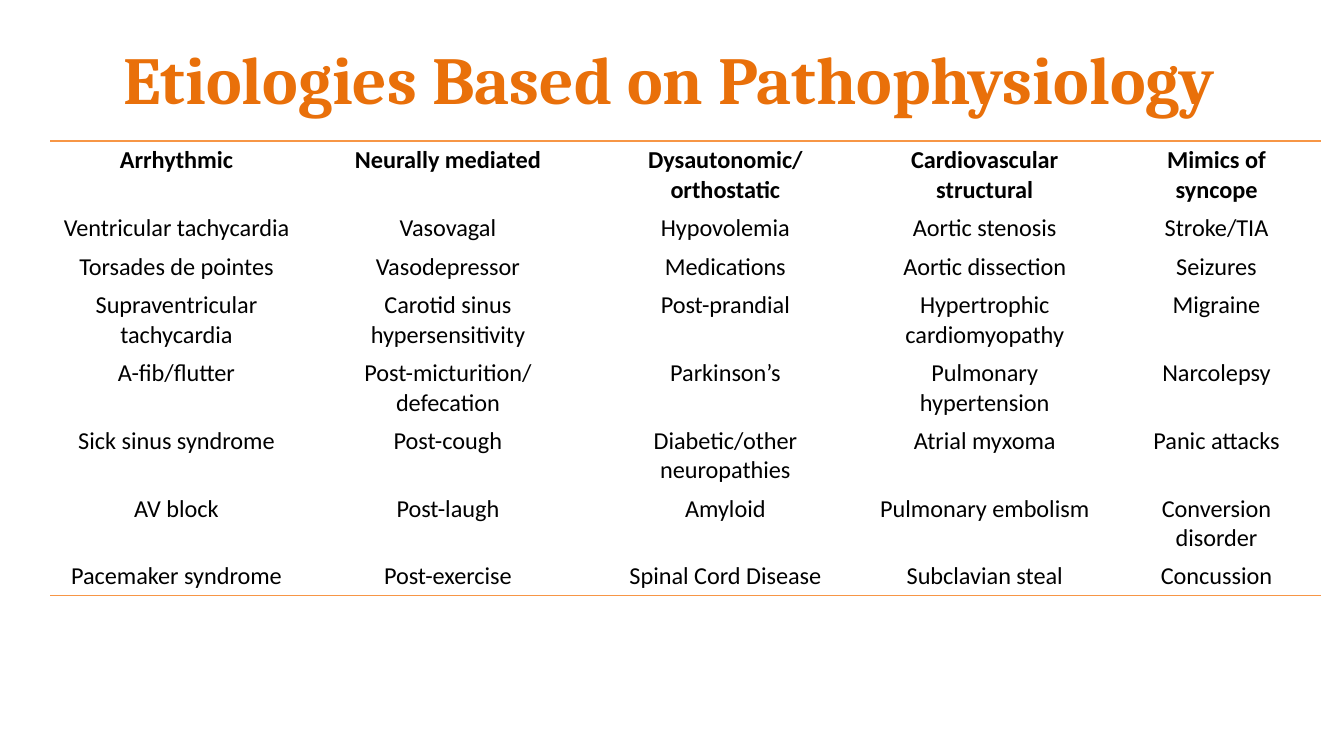
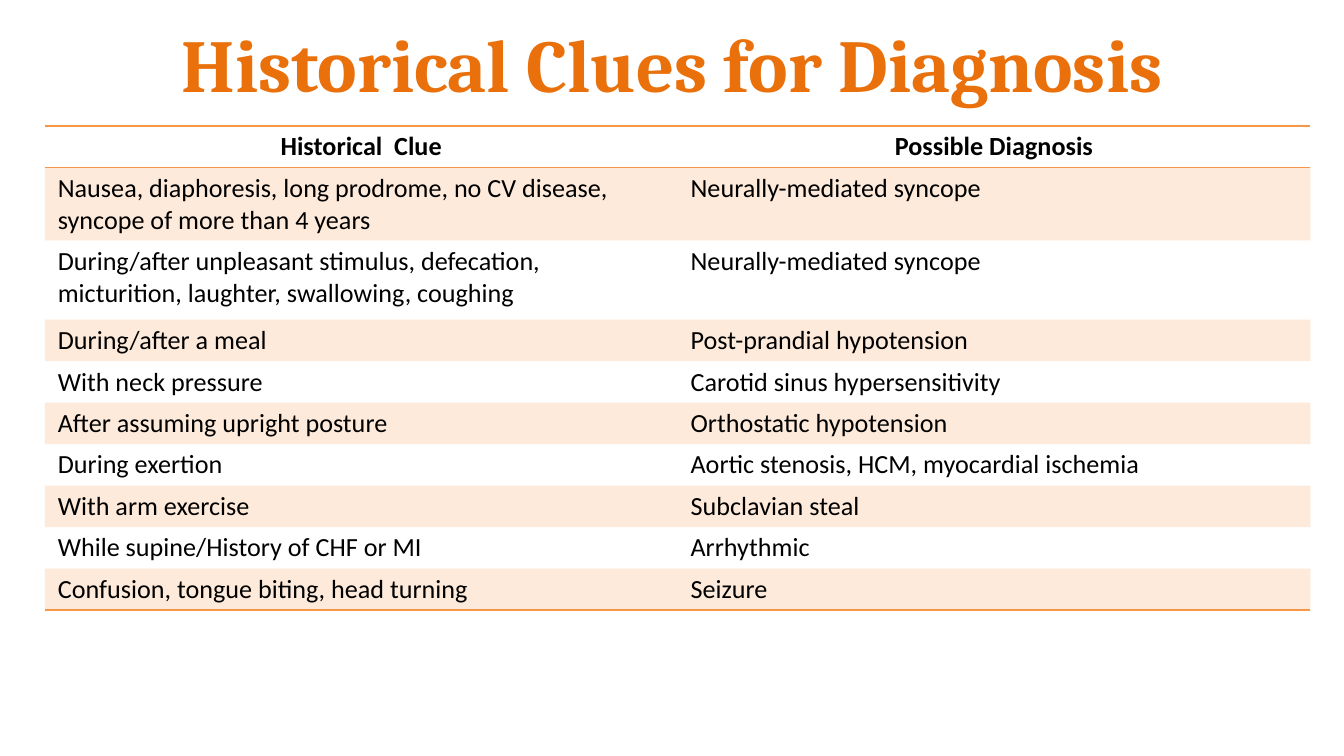
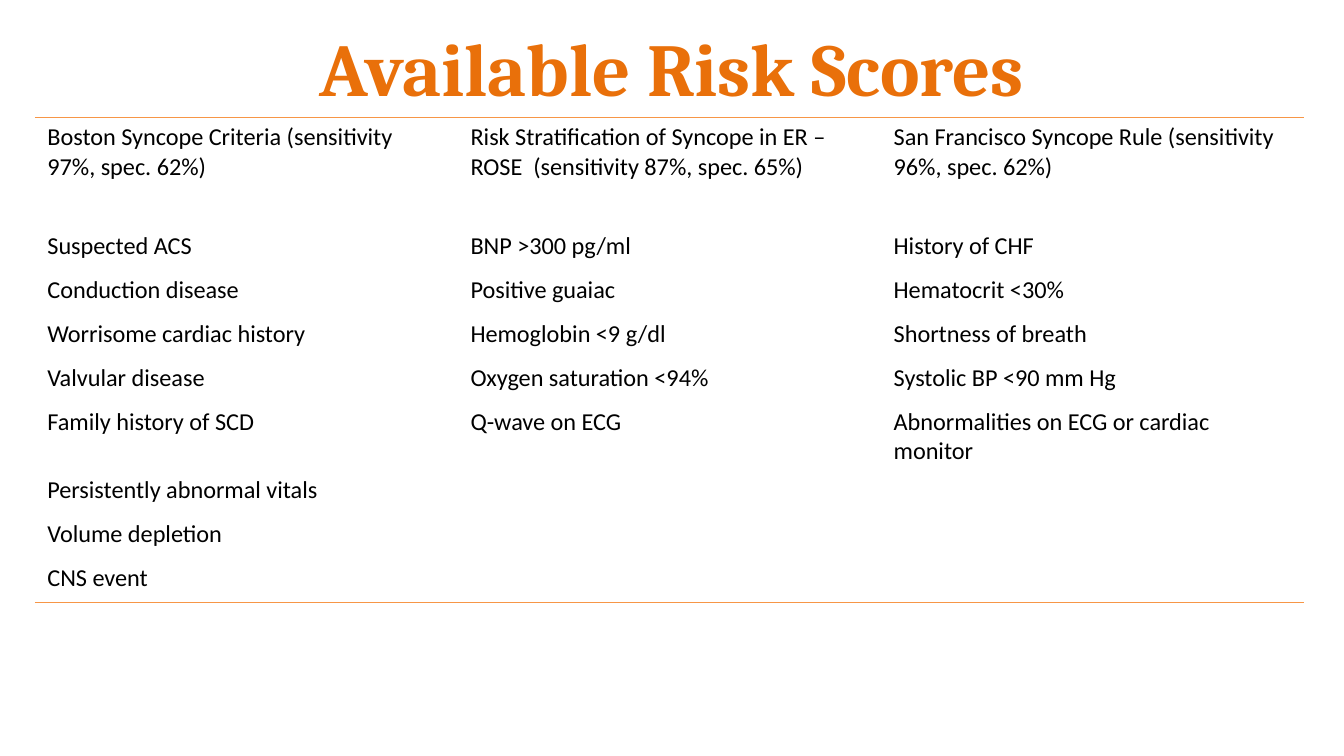
from lxml.etree import SubElement
from pptx import Presentation
from pptx.dml.color import RGBColor
from pptx.enum.text import MSO_ANCHOR, PP_ALIGN
from pptx.oxml.ns import qn
from pptx.util import Pt

TITLE_COLOR = "E9700A"
ACCENT = "F79646"
TEXT_COLOR = "000000"
TITLE_FONT = "Cambria"
BODY_FONT = "Calibri"
PLAIN_TABLE = "{2D5ABB26-0587-4C30-8999-92F81FD0307C}"

ETIOLOGIES = [
    ["Arrhythmic", "Neurally mediated", "Dysautonomic/\northostatic",
     "Cardiovascular structural", "Mimics of syncope"],
    ["Ventricular tachycardia", "Vasovagal", "Hypovolemia", "Aortic stenosis", "Stroke/TIA"],
    ["Torsades de pointes", "Vasodepressor", "Medications", "Aortic dissection", "Seizures"],
    ["Supraventricular tachycardia", "Carotid sinus hypersensitivity", "Post-prandial",
     "Hypertrophic cardiomyopathy", "Migraine"],
    ["A-fib/flutter", "Post-micturition/\ndefecation", "Parkinson’s",
     "Pulmonary hypertension", "Narcolepsy"],
    ["Sick sinus syndrome", "Post-cough", "Diabetic/other neuropathies",
     "Atrial myxoma", "Panic attacks"],
    ["AV block", "Post-laugh", "Amyloid", "Pulmonary embolism", "Conversion disorder"],
    ["Pacemaker syndrome", "Post-exercise", "Spinal Cord Disease",
     "Subclavian steal", "Concussion"],
]

CLUES = [
    ["Historical  Clue", "Possible Diagnosis"],
    ["Nausea, diaphoresis, long prodrome, no CV disease, syncope of more than 4 years",
     "Neurally-mediated syncope"],
    ["During/after unpleasant stimulus, defecation, micturition, laughter, swallowing, coughing",
     "Neurally-mediated syncope"],
    ["During/after a meal", "Post-prandial hypotension"],
    ["With neck pressure", "Carotid sinus hypersensitivity"],
    ["After assuming upright posture", "Orthostatic hypotension"],
    ["During exertion", "Aortic stenosis, HCM, myocardial ischemia"],
    ["With arm exercise", "Subclavian steal"],
    ["While supine/History of CHF or MI", "Arrhythmic"],
    ["Confusion, tongue biting, head turning", "Seizure"],
]

RISK_SCORES = [
    ["Boston Syncope Criteria (sensitivity  97%, spec. 62%)",
     "Risk Stratification of Syncope in ER – ROSE  (sensitivity 87%, spec. 65%)",
     "San Francisco Syncope Rule (sensitivity  96%, spec. 62%)"],
    ["Suspected ACS", "BNP >300 pg/ml", "History of CHF"],
    ["Conduction disease", "Positive guaiac", "Hematocrit <30%"],
    ["Worrisome cardiac history", "Hemoglobin <9 g/dl", "Shortness of breath"],
    ["Valvular disease", "Oxygen saturation <94%", "Systolic BP <90 mm Hg"],
    ["Family history of SCD", "Q-wave on ECG", "Abnormalities on ECG or cardiac monitor"],
    ["Persistently abnormal vitals", "", ""],
    ["Volume depletion", "", ""],
    ["CNS event", "", ""],
]


def rgb(color):
    return RGBColor.from_string(color)


def style_paragraph(paragraph, font_name, size, color, bold, align):
    paragraph.alignment = align
    for run in paragraph.runs:
        run.font.name = font_name
        run.font.size = Pt(size)
        run.font.bold = bold
        run.font.color.rgb = rgb(color)
    if not paragraph.runs:
        SubElement(paragraph._p, qn("a:endParaRPr"), sz=str(size * 100))


def add_title(slide, text, left, top, size):
    title = slide.shapes.add_textbox(Pt(left), Pt(top), Pt(648), Pt(67.5))
    frame = title.text_frame
    frame.word_wrap = True
    frame.vertical_anchor = MSO_ANCHOR.MIDDLE
    frame.text = text
    style_paragraph(frame.paragraphs[0], TITLE_FONT, size, TITLE_COLOR, True, PP_ALIGN.CENTER)


def add_rule(cell, side):
    rule = SubElement(cell._tc.get_or_add_tcPr(), qn(f"a:{side}"), w=str(Pt(1)))
    fill = SubElement(rule, qn("a:solidFill"))
    SubElement(fill, qn("a:srgbClr"), val=ACCENT)


def fill_cell(cell, banded):
    if not banded:
        cell.fill.background()
        return
    cell.fill.solid()
    cell.fill.fore_color.rgb = rgb(ACCENT)
    tint = cell._tc.tcPr.find(qn("a:solidFill")).find(qn("a:srgbClr"))
    SubElement(tint, qn("a:alpha"), val="20000")


def add_ruled_table(slide, rows, left, top, widths, heights, size, margins,
                    bold_header=True, centered=False, banded=False):
    frame = slide.shapes.add_table(len(rows), len(widths), Pt(left), Pt(top),
                                   Pt(sum(widths)), Pt(sum(heights)))
    table = frame.table
    table.first_row = table.horz_banding = False
    table._tbl.tblPr.find(qn("a:tableStyleId")).text = PLAIN_TABLE
    for column, width in zip(table.columns, widths):
        column.width = Pt(width)
    for row, height in zip(table.rows, heights):
        row.height = Pt(height)

    side_margin, end_margin = margins
    for r, row in enumerate(rows):
        header = r == 0 and bold_header
        align = PP_ALIGN.CENTER if centered or header else PP_ALIGN.LEFT
        for c, text in enumerate(row):
            cell = table.cell(r, c)
            cell.margin_left = cell.margin_right = Pt(side_margin)
            cell.margin_top = cell.margin_bottom = Pt(end_margin)
            cell.text_frame.text = text
            for paragraph in cell.text_frame.paragraphs:
                style_paragraph(paragraph, BODY_FONT, size, TEXT_COLOR, header, align)
            if r == 0:
                add_rule(cell, "lnT")
            if r == len(rows) - 1 or (r == 0 and banded):
                add_rule(cell, "lnB")
            fill_cell(cell, banded and r % 2 == 1)


def main():
    deck = Presentation()
    deck.slide_width, deck.slide_height = Pt(720), Pt(405)
    etiologies, clues, scores = [deck.slides.add_slide(deck.slide_layouts[6]) for _ in range(3)]

    add_title(etiologies, "Etiologies Based on Pathophysiology", 34.5, 8, 36)
    add_ruled_table(etiologies, ETIOLOGIES, 26.8, 75.5,
                    [135.4, 155.5, 141.8, 136.1, 112.3],
                    [35.3, 20.2, 20.2] + [35.3] * 4 + [20.2],
                    13, (6.5, 2.54), centered=True)

    add_title(clues, "Historical Clues for Diagnosis", 36, 0, 40)
    add_ruled_table(clues, CLUES, 24, 67.5, [339] * 2, [21.6, 37.5, 42.5] + [21.6] * 7,
                    14, (7, 2.7), banded=True)

    add_title(scores, "Available Risk Scores", 36, 2.2, 40)
    add_ruled_table(scores, RISK_SCORES, 18.7, 63, [226.7] * 3,
                    [58.3] + [23.6] * 4 + [35.3] + [23.6] * 3,
                    13, (6.7, 2.6), bold_header=False)

    deck.save("out.pptx")


if __name__ == "__main__":
    main()
